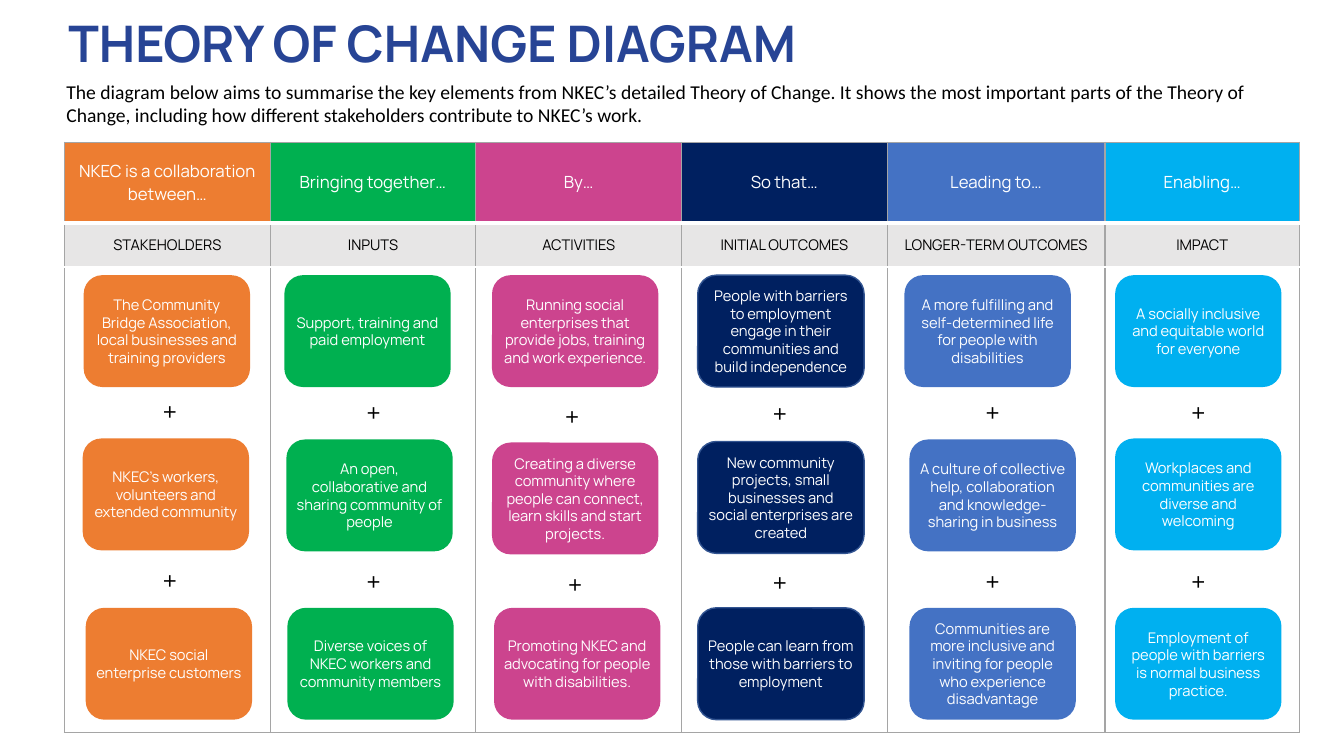
import pptx
import pptx.util
import pptx.dml.color
import pptx.enum.shapes
import pptx.enum.text
import pptx.oxml
import pptx.oxml.ns

HUES = {
    "orange": "ED7D31", "green": "00B050", "pink": "CC448E",
    "navy": "002060", "blue": "4472C4", "sky": "00B0F0",
    "title": "274495", "edge": "325491", "grid": "A5A5A5",
    "band": "E7E6E6", "white": "FFFFFF", "black": "000000",
}
SIDES = ("L", "R", "T", "B")
WIDTHS = (204, 204, 204, 204, 216, 193)
HEIGHTS = (80, 44, 462)
CARD = (165, 111)
PLUS = (127, 40)

STAGES = [
    ("orange", "NKEC is a collaboration between…", "STAKEHOLDERS",
     [(83, 273, "The Community Bridge Association, local businesses and training providers"),
      (82, 435, "NKEC’s workers, volunteers and extended community"),
      (85, 603, "NKEC social enterprise customers")],
     [(105, 388), (105, 556)]),
    ("green", "Bringing together…", "INPUTS",
     [(282, 273, "Support, training and paid employment"),
      (284, 436, "An open, collaborative and sharing community of people"),
      (285, 603, "Diverse voices of NKEC workers and community members")],
     [(307, 389), (307, 557)]),
    ("pink", "By…", "ACTIVITIES",
     [(488, 273, "Running social enterprises that provide jobs, training and work experience."),
      (488, 439, "Creating a diverse community where people can connect, "
                 "learn skills and start projects."),
      (490, 603, "Promoting NKEC and advocating for people with disabilities.")],
     [(504, 393), (507, 560)]),
    ("navy", "So that…", "INITIAL OUTCOMES",
     [(692, 273, "People with barriers to employment engage in their "
                 "communities and build independence"),
      (692, 438, "New community projects, small businesses and social enterprises are created"),
      (692, 603, "People can learn from those with barriers to employment")],
     [(710, 390), (710, 558)]),
    ("blue", "Leading to…", "LONGER-TERM OUTCOMES",
     [(897, 273, "A more fulfilling and self-determined life for people with disabilities"),
      (902, 436, "A culture of collective help, collaboration and knowledge-sharing in business"),
      (902, 603, "Communities are more inclusive and inviting for people "
                 "who experience disadvantage")],
     [(921, 389), (921, 557)]),
    ("sky", "Enabling…", "IMPACT",
     [(1106, 273, "A socially inclusive and equitable world for everyone"),
      (1106, 435, "Workplaces and communities are diverse and welcoming"),
      (1106, 603, "Employment of people with barriers is normal business practice.")],
     [(1125, 389), (1125, 557)]),
]


class Deck:
    font = "Manrope"
    scale = 9144

    def __init__(self, width, height):
        self.show = pptx.Presentation()
        self.show.slide_width = self.px(width)
        self.show.slide_height = self.px(height)
        self.slide = self.show.slides.add_slide(self.show.slide_layouts[6])

    def px(self, value):
        return pptx.util.Emu(value * self.scale)

    def hue(self, name):
        return pptx.dml.color.RGBColor.from_string(HUES[name])

    def paint(self, item, name):
        item.fill.solid()
        item.fill.fore_color.rgb = self.hue(name)

    def words(self, frame, text, size, hue, font=None, bold=False, center=True):
        frame.text = text
        para = frame.paragraphs[0]
        align = pptx.enum.text.PP_ALIGN
        para.alignment = align.CENTER if center else align.LEFT
        style = para.runs[0].font
        style.name = font or self.font
        style.size = pptx.util.Pt(size)
        style.bold = bold
        style.color.rgb = self.hue(hue)

    def inset(self, item):
        item.margin_left = item.margin_right = self.px(4)
        item.margin_top = item.margin_bottom = self.px(5)
        item.vertical_anchor = pptx.enum.text.MSO_ANCHOR.MIDDLE

    def label(self, x, y, width, height, text, size, hue, **style):
        box = self.slide.shapes.add_textbox(*map(self.px, (x, y, width, height)))
        box.text_frame.word_wrap = True
        box.text_frame.auto_size = pptx.enum.text.MSO_AUTO_SIZE.SHAPE_TO_FIT_TEXT
        self.words(box.text_frame, text, size, hue, **style)

    def card(self, x, y, text, hue):
        kind = pptx.enum.shapes.MSO_SHAPE.ROUNDED_RECTANGLE
        card = self.slide.shapes.add_shape(kind, *map(self.px, (x, y, *CARD)))
        card.shadow.inherit = False
        self.paint(card, hue)
        if hue == "navy":
            card.line.color.rgb = self.hue("edge")
            card.line.width = pptx.util.Pt(1)
        else:
            card.line.fill.background()
        card.text_frame.word_wrap = True
        self.inset(card.text_frame)
        self.words(card.text_frame, text, 10.5, "white")

    def border(self, cell, top, base, thick):
        props = cell._tc.get_or_add_tcPr()
        for side, hue in zip(SIDES, ("grid", "grid", top, base)):
            width = pptx.util.Pt(thick if side == "B" else 1)
            props.append(pptx.oxml.parse_xml(
                f'<a:ln{side} {pptx.oxml.ns.nsdecls("a")} w="{width}"><a:solidFill>'
                f'<a:srgbClr val="{HUES[hue]}"/></a:solidFill></a:ln{side}>'))

    def cell(self, cell, fill, edges, text="", size=12, hue="white"):
        self.border(cell, *edges)
        self.paint(cell, fill)
        self.inset(cell)
        if text:
            self.words(cell.text_frame, text, size, hue)

    def table(self, x, y):
        area = (x, y, sum(WIDTHS), sum(HEIGHTS))
        table = self.slide.shapes.add_table(
            len(HEIGHTS), len(WIDTHS), *map(self.px, area)).table
        table.first_row = table.horz_banding = False
        for col, width in zip(table.columns, WIDTHS):
            col.width = self.px(width)
        for row, height in zip(table.rows, HEIGHTS):
            row.height = self.px(height)
        for col, (hue, head, name, *_) in enumerate(STAGES):
            self.cell(table.cell(0, col), hue, ("grid", "white", 3), head)
            self.cell(table.cell(1, col), "band", ("white", "white", 1), name, 10.5, "black")
            self.cell(table.cell(2, col), "white", ("white", "grid", 1))


def main():
    deck = Deck(1333, 750)
    deck.table(64, 141)
    deck.label(58, 7, 908, 71, "THEORY OF CHANGE DIAGRAM", 36, "title",
               bold=True, center=False)
    deck.label(56, 74, 1210, 57,
               "The diagram below aims to summarise the key elements from NKEC’s "
               "detailed Theory of Change. It shows the most important parts of the "
               "Theory of Change, including how different stakeholders contribute to "
               "NKEC’s work.", 14, "black", font="Calibri", center=False)
    for hue, _, _, cards, signs in STAGES:
        for x, y, text in cards:
            deck.card(x, y, text, hue)
        for x, y in signs:
            deck.label(x, y, *PLUS, "+", 18, "black")
    deck.show.save("out.pptx")


if __name__ == "__main__":
    main()
